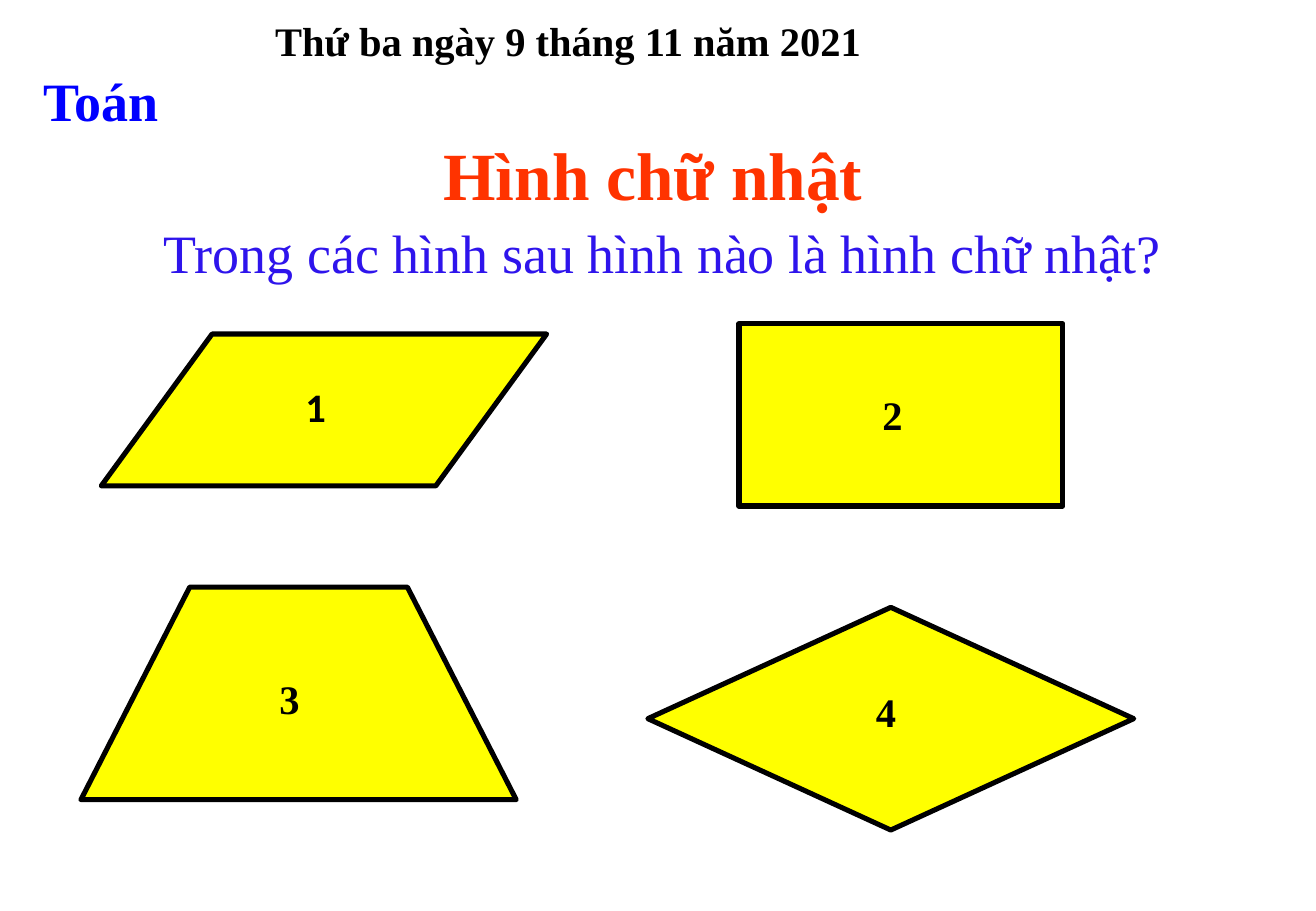
import pptx
import pptx.util
import pptx.dml.color
import pptx.enum.shapes
import pptx.enum.text

Pt = pptx.util.Pt
SHAPE = pptx.enum.shapes.MSO_SHAPE
ALIGN = pptx.enum.text.PP_ALIGN
ANCHOR = pptx.enum.text.MSO_ANCHOR
COLORS = {"black": "000000", "yellow": "FFFF00", "blue": "0000FF",
          "violet": "2E14EC", "red": "FF3300"}


def rgb(name):
    return pptx.dml.color.RGBColor.from_string(COLORS[name])


class Lesson:
    font = "Times New Roman"
    outline = 3

    def __init__(self, prs):
        self.s = prs.slides.add_slide(prs.slide_layouts[5])

    def add_run(self, sp, text, size, color, bold, centered, font=None):
        tf = sp.text_frame
        tf.word_wrap = True
        tf.auto_size = pptx.enum.text.MSO_AUTO_SIZE.NONE
        tf.vertical_anchor = ANCHOR.MIDDLE if centered else ANCHOR.TOP
        p = tf.paragraphs[0]
        p.alignment = ALIGN.CENTER if centered else ALIGN.LEFT
        r = p.add_run()
        r.text = text
        r.font.name = font or self.font
        r.font.size = Pt(size)
        r.font.bold = bold
        r.font.color.rgb = rgb(color)

    def title(self, box, text, size, color):
        sp = self.s.shapes.title
        sp.left, sp.top, sp.width, sp.height = map(Pt, box)
        self.add_run(sp, text, size, color, False, True)

    def text(self, box, text, size=24, color="black", centered=False, font=None):
        sp = self.s.shapes.add_textbox(*map(Pt, box))
        self.add_run(sp, text, size, color, True, centered, font)

    def paint(self, sp):
        sp.shadow.inherit = False
        sp.fill.solid()
        sp.fill.fore_color.rgb = rgb("yellow")
        sp.line.color.rgb = rgb("black")
        sp.line.width = Pt(self.outline)

    def figure(self, kind, box, adjustment=None):
        sp = self.s.shapes.add_shape(kind, *map(Pt, box))
        if adjustment is not None:
            sp.adjustments[0] = adjustment
        self.paint(sp)

    def trapezoid(self, box, inset):
        x, y, w, h = box
        builder = self.s.shapes.build_freeform(Pt(x), Pt(y + h))
        corners = [(x + inset, y), (x + w - inset, y), (x + w, y + h)]
        builder.add_line_segments([(Pt(a), Pt(b)) for a, b in corners], close=True)
        self.paint(builder.convert_to_shape())


def main():
    prs = pptx.Presentation()
    prs.slide_width, prs.slide_height = Pt(780), Pt(540)
    lesson = Lesson(prs)

    lesson.title((42, 119, 702, 61),
                 "Trong các hình sau hình nào là hình chữ nhật?", 32, "violet")
    lesson.figure(SHAPE.RECTANGLE, (438, 192, 192, 108))
    lesson.figure(SHAPE.PARALLELOGRAM, (60, 198, 264, 90), 0.73)
    lesson.text((174, 223, 36, 36), "1", font="Calibri")
    lesson.text((510, 227.5, 36, 36), " 2")
    lesson.text((-6, 40.5, 132, 38), "Toán", 32, "blue", True)
    lesson.trapezoid((48, 348, 258, 126), 64.5)
    lesson.figure(SHAPE.DIAMOND, (384, 360, 288, 132))
    lesson.text((158.5, 396, 54, 36), "3")
    lesson.text((512, 403.5, 54, 36), "4")
    lesson.text((192, 84, 390, 38), "Hình chữ nhật", 40, "red", True)
    lesson.text((156, 6, 546, 36.5), "Thứ ba ngày 9 tháng 11 năm 2021")

    prs.save("out.pptx")


if __name__ == "__main__":
    main()
